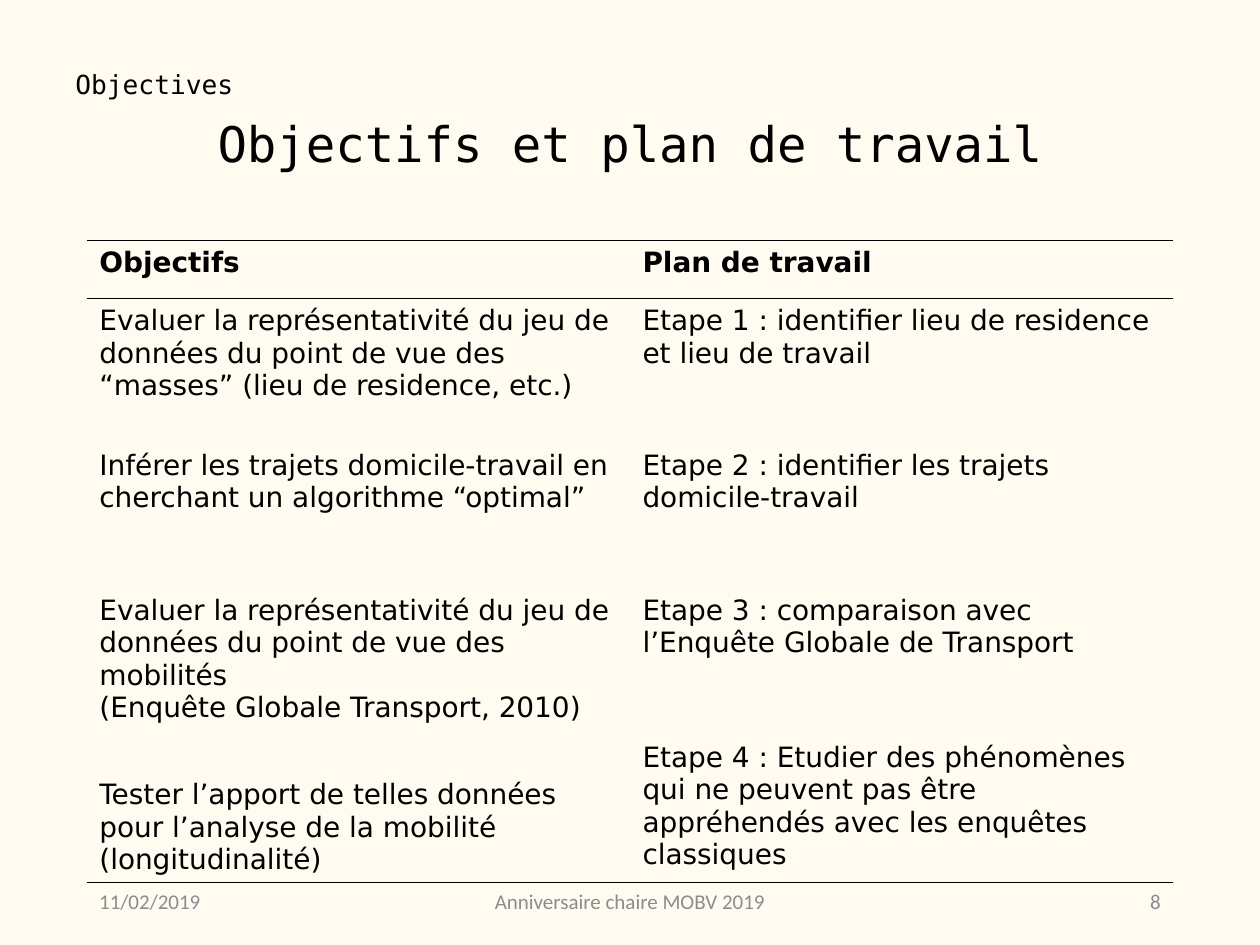
from lxml import etree
from pptx import Presentation
from pptx.dml.color import RGBColor
from pptx.enum.text import MSO_ANCHOR, PP_ALIGN
from pptx.oxml.ns import qn
from pptx.util import Cm, Pt

LEFT, CENTER, RIGHT = PP_ALIGN.LEFT, PP_ALIGN.CENTER, PP_ALIGN.RIGHT
TOP, MIDDLE, BOTTOM = MSO_ANCHOR.TOP, MSO_ANCHOR.MIDDLE, MSO_ANCHOR.BOTTOM
PLAIN_TABLE_STYLE = "{2D5ABB26-0587-4C30-8999-92F81FD0307C}"
COLOURS = {"page": "FFFBF0", "ink": "000000", "footer": "8C8C8C"}
HEADING_FONT, TABLE_FONT, FOOTER_FONT = "DejaVu Sans Mono", "DejaVu Sans", "Calibri"

MARGIN = 1.75
COLUMN_WIDTH = 10.95
ROW_HEIGHTS = [1.17, 2.92, 2.92, 2.44, 2.9]
ROWS = [
    ("Objectifs", "Plan de travail"),
    ("Evaluer la représentativité du jeu de données du point de vue des “masses” (lieu de residence, etc.)",
     "Etape 1 : identifier lieu de residence et lieu de travail"),
    ("Inférer les trajets domicile-travail en cherchant un algorithme “optimal”",
     "Etape 2 : identifier les trajets domicile-travail"),
    ("Evaluer la représentativité du jeu de données du point de vue des mobilités\n"
     "(Enquête Globale Transport, 2010)",
     "Etape 3 : comparaison avec l’Enquête Globale de Transport"),
    ("Tester l’apport de telles données pour l’analyse de la mobilité (longitudinalité)",
     "Etape 4 : Etudier des phénomènes qui ne peuvent pas être appréhendés avec les enquêtes classiques"),
]
FOOTERS = [
    (MARGIN, 5.72, "11/02/2019", LEFT),
    (8.41, 8.58, "Anniversaire chaire MOBV 2019", CENTER),
    (17.93, 5.72, "8", RIGHT),
]


class SlideBuilder:
    def __init__(self, page, colours):
        self.page = page
        self.colours = colours
        fill = page.background.fill
        fill.solid()
        fill.fore_color.rgb = self.colour("page")

    def colour(self, name):
        return RGBColor.from_string(self.colours[name])

    def fill_text(self, frame, text, font, size, colour="ink", bold=False, align=LEFT, spacing=1.0):
        """Fill a text frame, one paragraph for each line of text."""
        frame.word_wrap = True
        frame.text = text
        font_format = {"name": font, "size": Pt(size), "bold": bold}
        for para in frame.paragraphs:
            para.alignment = align
            para.line_spacing = spacing
            for span in para.runs:
                for key, value in font_format.items():
                    setattr(span.font, key, value)
                span.font.color.rgb = self.colour(colour)

    def text(self, left, top, width, height, text, font, size, anchor=TOP, **style):
        box = self.page.shapes.add_textbox(Cm(left), Cm(top), Cm(width), Cm(height))
        box.text_frame.vertical_anchor = anchor
        self.fill_text(box.text_frame, text, font, size, **style)

    def rule(self, cell, sides):
        """Draw 1 pt borders; sides are drawn from 'T' and 'B', in that order."""
        properties = cell._tc.get_or_add_tcPr()
        for position, side in enumerate(sides):
            line = etree.Element(qn(f"a:ln{side}"), w=str(Pt(1)))
            fill = etree.SubElement(line, qn("a:solidFill"))
            etree.SubElement(fill, qn("a:srgbClr"), val=self.colours["ink"])
            properties.insert(position, line)

    def table(self, left, top, column_width, heights, rows, font, size):
        columns = len(rows[0])
        frame = self.page.shapes.add_table(len(rows), columns, Cm(left), Cm(top),
                                           Cm(column_width * columns), Cm(sum(heights)))
        table = frame.table
        table.horz_banding = False
        table._tbl.tblPr.find(qn("a:tableStyleId")).text = PLAIN_TABLE_STYLE
        for column in table.columns:
            column.width = Cm(column_width)
        borders = {0: "TB", len(rows) - 1: "B"}
        for index, (height, texts) in enumerate(zip(heights, rows)):
            table.rows[index].height = Cm(height)
            for cell, text in zip(table.rows[index].cells, texts):
                cell.fill.background()
                self.fill_text(cell.text_frame, text, font, size, bold=index == 0)
                self.rule(cell, borders.get(index, ""))
        return table


def main():
    deck = Presentation()
    deck.slide_width, deck.slide_height = Cm(25.4), Cm(19.05)
    builder = SlideBuilder(deck.slides.add_slide(deck.slide_layouts[6]), COLOURS)

    for left, width, text, align in FOOTERS:
        builder.text(left, 17.65, width, 1.02, text, FOOTER_FONT, 12,
                     anchor=MIDDLE, colour="footer", align=align)
    builder.text(1.27, 1.32, 6.81, 0.91, "Objectives", HEADING_FONT, 15, spacing=0.9)
    builder.text(1.27, 2.29, 22.86, 1.22, "Objectifs et plan de travail", HEADING_FONT, 28,
                 align=CENTER, spacing=0.9)
    table = builder.table(MARGIN, 4.85, COLUMN_WIDTH, ROW_HEIGHTS, ROWS, TABLE_FONT, 16)
    table.cell(len(ROWS) - 1, 0).vertical_anchor = BOTTOM

    deck.save("out.pptx")


if __name__ == "__main__":
    main()
